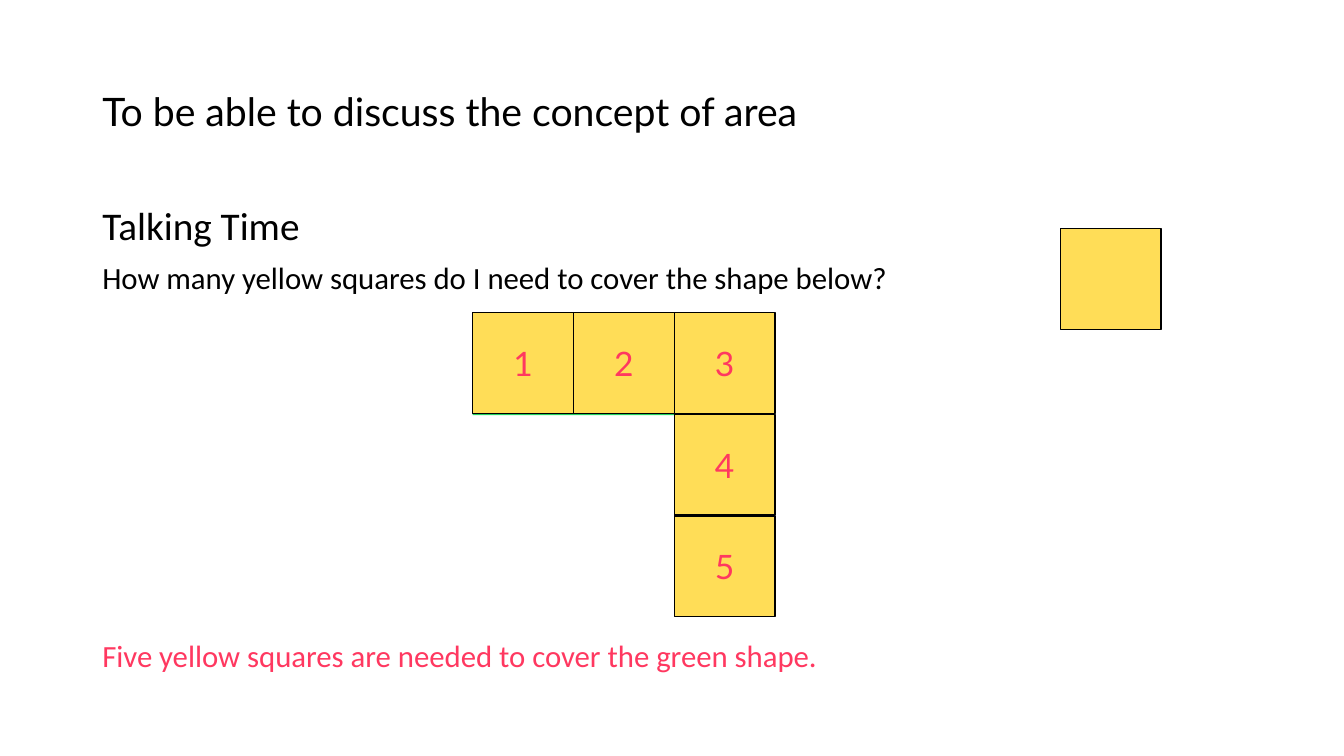
"""Build the slide on covering an L shape with yellow squares."""
from pptx import Presentation
from pptx.dml.color import RGBColor
from pptx.enum import shapes, text
from pptx.util import Pt

BLACK = RGBColor(0x00, 0x00, 0x00)
GREEN = RGBColor(0x23, 0xD1, 0x60)
YELLOW = RGBColor(0xFF, 0xDD, 0x57)
RED = RGBColor(0xFF, 0x38, 0x60)
SIDE = 72
LEFT, TOP = 337.7, 223.2
ROW_STEP = 72.7


def write(p, words, size=22, font="Calibri", color=BLACK, spacing=0.9, before=0,
          align=text.PP_ALIGN.LEFT):
    p.alignment = align
    p.line_spacing = spacing
    p.space_before = Pt(before)
    r = p.add_run()
    r.text = words
    r.font.name = font
    r.font.size = Pt(size)
    r.font.color.rgb = color


def add_rect(x, y, w, h, fill, line=None):
    sp = s.shapes.add_shape(shapes.MSO_SHAPE.RECTANGLE, Pt(x), Pt(y), Pt(w), Pt(h))
    sp.shadow.inherit = False
    sp.fill.solid()
    sp.fill.fore_color.rgb = fill
    if line is None:
        sp.line.fill.background()
    else:
        sp.line.color.rgb = line
        sp.line.width = Pt(1)
    return sp


prs = Presentation()
prs.slide_width, prs.slide_height = Pt(960), Pt(540)
s = prs.slides.add_slide(prs.slide_layouts[6])

boxes = [
    (28.8, 691, 104.4, text.MSO_ANCHOR.MIDDLE,
     [("To be able to discuss the concept of area", dict(size=28, font="Lato"))]),
    (144, 691, 72, text.MSO_ANCHOR.TOP,
     [("Talking Time", dict(size=28)),
      ("How many yellow squares do I need to cover the shape below?", dict(before=10))]),
    (454.6, 828, 32, text.MSO_ANCHOR.TOP,
     [("Five yellow squares are needed to cover the green shape.", dict(color=RED))]),
]
for top, width, height, anchor, lines in boxes:
    tf = s.shapes.add_textbox(Pt(66), Pt(top), Pt(width), Pt(height)).text_frame
    tf.word_wrap = True
    tf.vertical_anchor = anchor
    for i, (words, style) in enumerate(lines):
        p = tf.add_paragraph() if i else tf.paragraphs[0]
        write(p, words, **style)

add_rect(LEFT, TOP + 1.4, 3 * SIDE, SIDE, GREEN)
add_rect(LEFT + 2 * SIDE, TOP + 1.4, SIDE, 3 * SIDE, GREEN)
add_rect(757.4, 163.4, SIDE, SIDE, YELLOW, BLACK)

cells = [(0, 0), (1, 0), (2, 0), (2, 1), (2, 2)]
for number, (col, row) in enumerate(cells, 1):
    sp = add_rect(LEFT + col * SIDE, TOP + row * ROW_STEP, SIDE, SIDE, YELLOW, BLACK)
    tf = sp.text_frame
    tf.vertical_anchor = text.MSO_ANCHOR.MIDDLE
    write(tf.paragraphs[0], str(number), size=24, font="Lato", color=RED, spacing=1.0,
          align=text.PP_ALIGN.CENTER)

prs.save("out.pptx")
